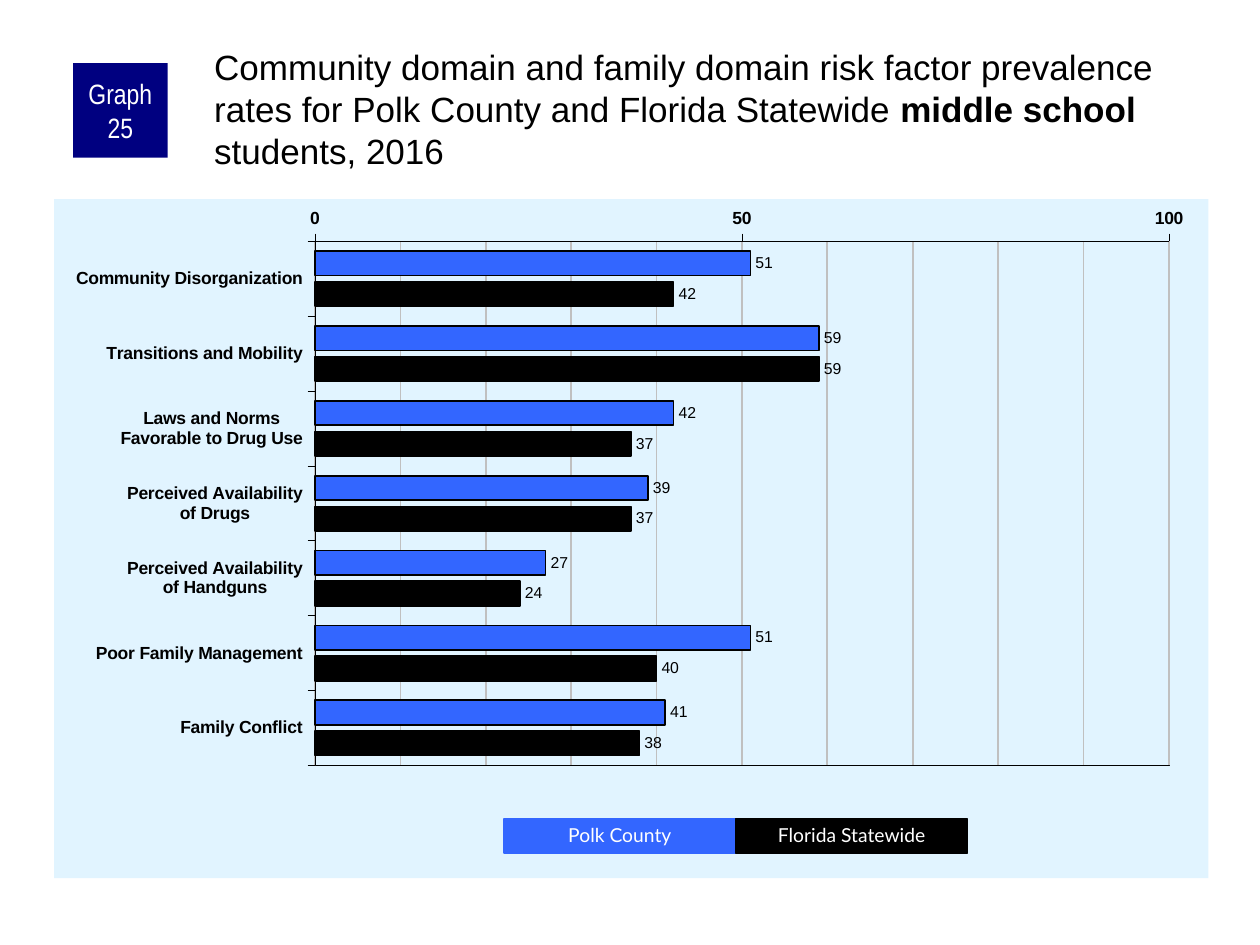
from copy import deepcopy

from lxml import etree
from pptx import Presentation, util as u
from pptx.chart import data as cd
from pptx.dml.color import RGBColor
from pptx.enum import chart as ec, shapes, text
from pptx.oxml import parse_xml
from pptx.oxml.ns import nsdecls, qn

BLACK = RGBColor(0, 0, 0)
WHITE = RGBColor(255, 255, 255)
NAVY = RGBColor(0, 0, 0x80)
BLUE = RGBColor(0x33, 0x66, 0xFF)
PALE = RGBColor(0xE1, 0xF4, 0xFF)
GREY = RGBColor(0xC0, 0xC0, 0xC0)

deck = Presentation()
deck.slide_width, deck.slide_height = u.Inches(10), u.Inches(7.5)
slide = deck.slides.add_slide(deck.slide_layouts[6])


def area(x, y, w, h):
    """Turn percentages of the slide's size into lengths."""
    wide, high = deck.slide_width / 100, deck.slide_height / 100
    return [u.Emu(round(v)) for v in (x * wide, y * high, w * wide, h * high)]


def block(words, box, fill, size, face):
    """Draw a filled rectangle with white centred text."""
    rect = slide.shapes.add_shape(shapes.MSO_SHAPE.RECTANGLE, *area(*box))
    rect.shadow.inherit = False
    rect.fill.solid()
    rect.fill.fore_color.rgb = fill
    rect.line.fill.background()
    para = rect.text_frame.paragraphs[0]
    para.text = words
    para.alignment = text.PP_ALIGN.CENTER
    para.font.size, para.font.name = u.Pt(size), face
    para.font.color.rgb = WHITE
    return rect


# Chart data
rows = [
    ("Community Disorganization", 51, 42),
    ("Transitions and Mobility", 59, 59),
    ("Laws and Norms\nFavorable to Drug Use", 42, 37),
    ("Perceived Availability\nof Drugs", 39, 37),
    ("Perceived Availability\nof Handguns", 27, 24),
    ("Poor Family Management", 51, 40),
    ("Family Conflict", 41, 38),
]
names, polk, state = zip(*rows)
data = cd.CategoryChartData()
data.categories = names
data.add_series("Series 1", polk)
data.add_series("Series 2", state)
chart = slide.shapes.add_chart(
    ec.XL_CHART_TYPE.BAR_CLUSTERED, *area(4.3, 21.07, 91.6, 71.87), data).chart
chart.has_legend = chart.has_title = False
chart.font.size, chart.font.name = u.Pt(11.8), "Arial"
chart.font.color.rgb = BLACK

# Bars and value labels
plot = chart.plots[0]
plot.gap_width, plot.overlap = 80, -25
plot.vary_by_categories = False
for bars, tint in zip(plot.series, (BLUE, BLACK)):
    bars.invert_if_negative = False
    bars.format.fill.solid()
    bars.format.fill.fore_color.rgb = tint
    bars.format.line.color.rgb = BLACK
    bars.format.line.width = u.Pt(1)
    tags = bars.data_labels
    tags.show_value = True
    tags.position = ec.XL_LABEL_POSITION.OUTSIDE_END
    tags.font.size, tags.font.name = u.Pt(9), "Arial"
    tags.font.color.rgb = BLACK

# Axes: first category on top, values along the bottom
cat, val = chart.category_axis, chart.value_axis
for axis in (cat, val):
    axis.major_tick_mark = ec.XL_TICK_MARK.OUTSIDE
    axis.minor_tick_mark = ec.XL_TICK_MARK.NONE
    font = axis.tick_labels.font
    font.size, font.name, font.bold = u.Pt(10), "Arial", True
    font.color.rgb = BLACK
    axis.format.line.color.rgb = BLACK
    axis.format.line.width = u.Pt(0.25)
cat.reverse_order = True
cat.crosses = ec.XL_AXIS_CROSSES.MAXIMUM
val.minimum_scale, val.maximum_scale = 0, 100
val.major_unit, val.minor_unit = 50, 10

# Gridlines: the minor ones share the look of the major ones
val.has_major_gridlines = val.has_minor_gridlines = True
grid = val.major_gridlines.format.line
grid.color.rgb = GREY
grid.width = u.Pt(1)
root = val._element
look = root.find(qn("c:majorGridlines")).find(qn("c:spPr"))
root.find(qn("c:minorGridlines")).append(deepcopy(look))

# Plot area: fixed place and thin frame
pane = chart._chartSpace.chart.plotArea
old = pane.find(qn("c:layout"))
if old is not None:
    pane.remove(old)
spot = parse_xml(f"<c:layout {nsdecls('c')}><c:manualLayout/></c:layout>")
for tag, share in (("layoutTarget", "inner"), ("xMode", "edge"), ("yMode", "edge"),
                   ("x", 0.226), ("y", 0.062), ("w", 0.74), ("h", 0.772)):
    etree.SubElement(spot[0], qn("c:" + tag)).set("val", str(share))
pane.insert(0, spot)
pane.append(parse_xml(
    f"<c:spPr {nsdecls('c', 'a')}><a:noFill/><a:ln w='{u.Pt(0.25)}'><a:solidFill>"
    f"<a:srgbClr val='{BLACK}'/></a:solidFill></a:ln></c:spPr>"))

# Pale chart background
back = parse_xml(
    f"<c:spPr {nsdecls('c', 'a')}><a:solidFill><a:srgbClr val='{PALE}'/>"
    "</a:solidFill><a:ln><a:noFill/></a:ln></c:spPr>")
chart._chartSpace.chart.addnext(back)

# Graph number
badge = block("Graph 25", (5.8, 6.67, 7.5, 10), NAVY, 16, "Arial Narrow")
frame = badge.text_frame
frame.vertical_anchor = text.MSO_ANCHOR.MIDDLE
frame.margin_left = frame.margin_right = u.Inches(0.05)
frame.margin_top = frame.margin_bottom = 0

# Title
frame = slide.shapes.add_textbox(*area(16.7, 4.4, 79.2, 11.07)).text_frame
frame.word_wrap = True
frame.margin_left = frame.margin_top = u.Inches(0.03)
frame.margin_right = frame.margin_bottom = 0
para = frame.paragraphs[0]
para.font.size, para.font.name = u.Pt(20), "Arial"
para.font.color.rgb = BLACK
for words, bold in (
        ("Community domain and family domain risk factor prevalence "
         "rates for Polk County and Florida Statewide ", False),
        ("middle school", True), (" students, 2016", False)):
    run = para.add_run()
    run.text, run.font.bold = words, bold

# Legend: two equal blocks side by side
for col, (words, tint) in enumerate((("Polk County", BLUE), ("Florida Statewide", BLACK))):
    key = block(words, (40 + 18.4 * col, 86.67, 18.4, 3.6), tint, 11, "Lato")
    key.line.color.rgb = tint
    key.line.width = u.Pt(0.75)
    key.text_frame.auto_size = text.MSO_AUTO_SIZE.SHAPE_TO_FIT_TEXT
    key.text_frame.paragraphs[0].line_spacing = 0.9

deck.save("out.pptx")
